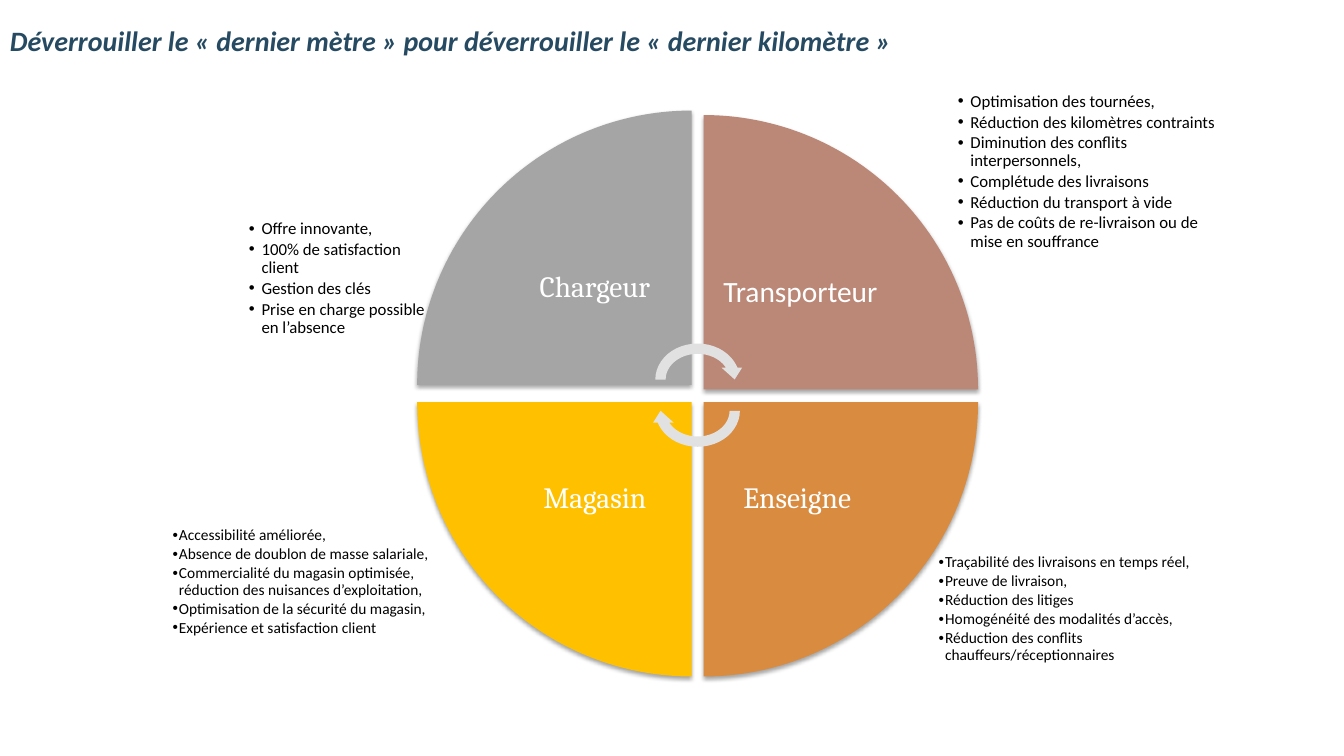
from lxml import etree
from pptx import Presentation
from pptx.dml.color import RGBColor
from pptx.enum.shapes import MSO_SHAPE
from pptx.enum.text import MSO_ANCHOR, PP_ALIGN
from pptx.oxml.ns import qn
from pptx.util import Pt

WEDGE = MSO_SHAPE.PIE_WEDGE
ARROW = MSO_SHAPE.CIRCULAR_ARROW
TOP, MIDDLE = MSO_ANCHOR.TOP, MSO_ANCHOR.MIDDLE
LEFT, CENTER = PP_ALIGN.LEFT, PP_ALIGN.CENTER

COLORS = {
    "title": "264A61", "text": "000000", "label": "FFFFFF", "arrow": "E1E1E1",
    "chargeur": "A5A5A5", "transporteur": "BB8776",
    "enseigne": "D98B3F", "magasin": "FFC000",
}

TITLE = "Déverrouiller le « dernier mètre » pour déverrouiller le « dernier kilomètre »"

QUADRANTS = [
    ("Chargeur", "Cambria", "chargeur", 0, 0, 0, 0),
    ("Transporteur", "Calibri", "transporteur", 1, 0, 90, 3.2),
    ("Enseigne ", "Cambria", "enseigne", 1, 1, 180, 0),
    ("Magasin", "Cambria", "magasin", 0, 1, 270, 0),
]

BENEFITS = [
    ((666, 391.7, 190, 126.7), 11, 4.5, 4.5, [
        "Traçabilité des livraisons en temps réel,",
        "Preuve de livraison,",
        "Réduction des litiges",
        "Homogénéité des modalités d’accès,",
        "Réduction des conflits chauffeurs/réceptionnaires",
    ]),
    ((118.8, 372.3, 219, 144), 11, 4.5, 4.5, [
        "Accessibilité améliorée,",
        "Absence de doublon de masse salariale,",
        "Commercialité du magasin optimisée, réduction des nuisances d’exploitation,",
        "Optimisation de la sécurité du magasin,",
        "Expérience et satisfaction client",
    ]),
    ((679.7, 62, 196.6, 169), 12, 9, 4.5, [
        "Optimisation des tournées,",
        "Réduction des kilomètres contraints",
        "Diminution des conflits interpersonnels,",
        "Complétude des livraisons",
        "Réduction du transport à vide",
        "Pas de coûts de re-livraison ou de mise en souffrance",
    ]),
    ((172.8, 152.5, 137, 92), 12, 9, 5, [
        "Offre innovante,",
        "100% de satisfaction client",
        "Gestion des clés",
        "Prise en charge possible en l’absence",
    ]),
]


def set_values(target, values):
    """Set attributes of an object from a dict of values."""
    for name, value in values.items():
        setattr(target, name, value)


def add_text(slide, box, texts, size, color, insets, font="Calibri", emphasis=False,
             anchor=TOP, align=LEFT, line_spacing=0.9, bullet_indent=0):
    """Write paragraphs in a text box, bulleted when an indent is given."""
    frame = slide.shapes.add_textbox(*map(Pt, box)).text_frame
    horizontal, vertical = map(Pt, insets)
    set_values(frame, {
        "word_wrap": True, "vertical_anchor": anchor,
        "margin_left": horizontal, "margin_right": horizontal,
        "margin_top": vertical, "margin_bottom": vertical,
    })
    for index, text in enumerate(texts):
        paragraph = frame.add_paragraph() if index else frame.paragraphs[0]
        if bullet_indent:
            add_bullet(paragraph, bullet_indent)
        set_values(paragraph, {
            "alignment": align, "line_spacing": line_spacing,
            "space_after": Pt(size * 0.15) if bullet_indent else Pt(0),
        })
        run = paragraph.add_run()
        run.text = text
        set_values(run.font, {
            "name": font, "size": Pt(size), "bold": emphasis, "italic": emphasis,
        })
        run.font.color.rgb = RGBColor.from_string(COLORS[color])


def add_bullet(paragraph, indent):
    """Give a paragraph a hanging round bullet."""
    properties = paragraph._p.get_or_add_pPr()
    properties.set("marL", str(Pt(indent)))
    properties.set("indent", str(-Pt(indent)))
    bullet_color = etree.SubElement(properties, qn("a:buClr"))
    etree.SubElement(bullet_color, qn("a:srgbClr"), val=COLORS["text"])
    etree.SubElement(properties, qn("a:buFont"), typeface="Arial")
    etree.SubElement(properties, qn("a:buChar"), char="•")


def add_plain_shape(slide, kind, box, color, rotation):
    """Add a filled shape without outline or inherited shadow."""
    shape = slide.shapes.add_shape(kind, *map(Pt, box))
    set_values(shape, {"rotation": rotation})
    shape.shadow.inherit = False
    shape.fill.solid()
    shape.fill.fore_color.rgb = RGBColor.from_string(COLORS[color])
    shape.line.fill.background()
    return shape


def add_soft_shadow(shape):
    """Cast a faint shadow straight below a shape."""
    effects = shape._element.spPr.find(qn("a:effectLst"))
    shadow = etree.SubElement(
        effects, qn("a:outerShdw"), blurRad=str(Pt(3.1)), dist=str(Pt(1.8)),
        dir="5400000", rotWithShape="0")
    shadow_color = etree.SubElement(shadow, qn("a:srgbClr"), val=COLORS["text"])
    etree.SubElement(shadow_color, qn("a:alpha"), val="35000")


def add_wheel(slide, box):
    """Draw the four labelled wedges and the two turning arrows."""
    left, top, width, height = box
    radius, label_size = 196, 138.2
    for name, font, color, column, row, rotation, drop in QUADRANTS:
        x = left + column * (width - radius)
        y = top + row * (height - radius) + drop
        wedge = add_plain_shape(slide, WEDGE, (x, y, radius, radius), color, rotation)
        add_soft_shadow(wedge)
        label_x = x + (1 - column) * (radius - label_size)
        label_y = y + (1 - row) * (radius - label_size)
        add_text(slide, (label_x, label_y, label_size, label_size), [name], 21, "label",
                 (11.5, 11.5), font=font, anchor=MIDDLE, align=CENTER)
    arrow_width, arrow_height = 67.7, 58.8
    arrow_x = left + (width - arrow_width) / 2
    for offset, rotation in ((162.7, 0), (185, 180)):
        add_plain_shape(slide, ARROW, (arrow_x, top + offset, arrow_width, arrow_height),
                        "arrow", rotation)


def add_benefits(slide, box, size, indent, inset, items):
    """List the benefits for one party."""
    add_text(slide, box, items, size, "text", (inset, inset), bullet_indent=indent)


def add_title(slide, box):
    """Write the slide title."""
    add_text(slide, box, [TITLE], 20, "title", (7.2, 3.6), emphasis=True, line_spacing=1.0)


def main():
    """Build and save the slide."""
    presentation = Presentation()
    set_values(presentation, {"slide_width": Pt(960), "slide_height": Pt(540)})
    slide = presentation.slides.add_slide(presentation.slide_layouts[6])
    for benefits in BENEFITS:
        add_benefits(slide, *benefits)
    add_wheel(slide, (298, 79, 400.6, 404.2))
    add_title(slide, (0, 13, 824.4, 31.7))
    presentation.save("out.pptx")


if __name__ == "__main__":
    main()
